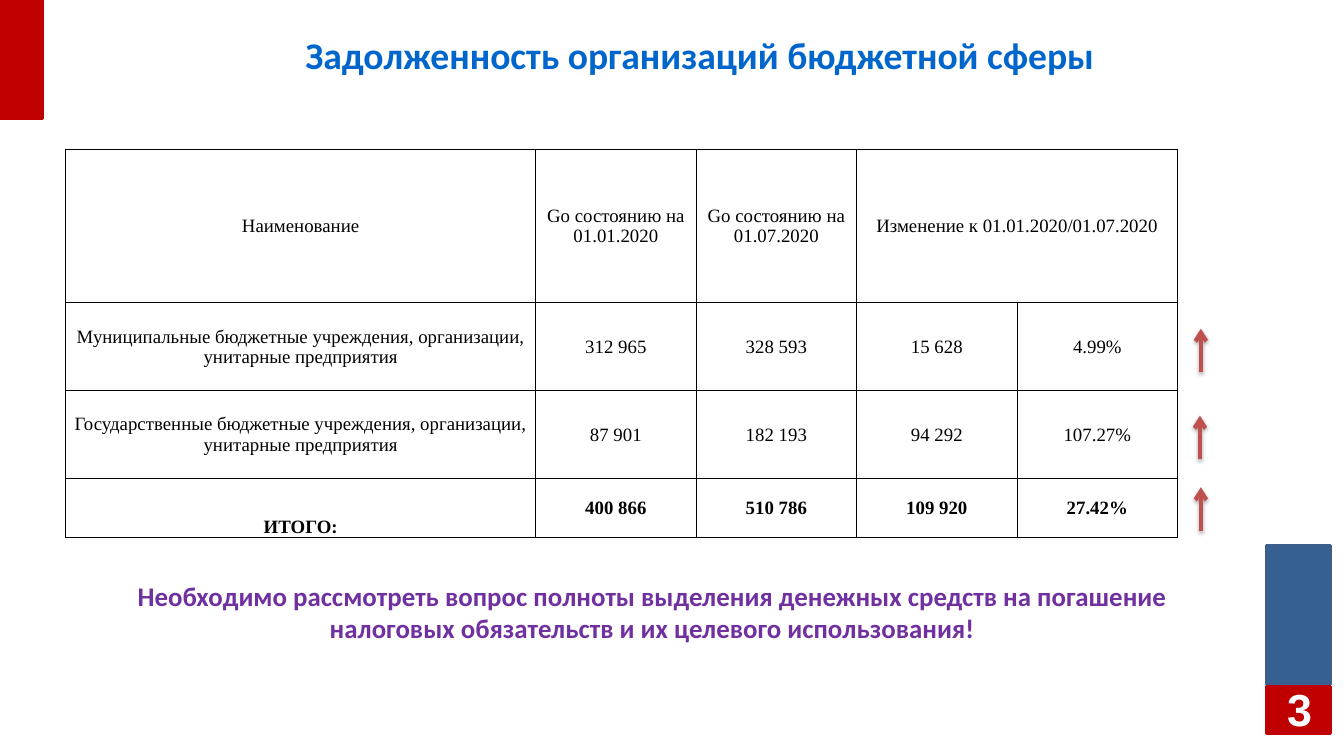
"""Builds the slide on the debts of budget-funded organisations."""
from lxml.etree import SubElement
from pptx import Presentation
from pptx.dml.color import RGBColor
from pptx.enum.shapes import MSO_CONNECTOR as Connector, MSO_SHAPE as Shape
from pptx.enum.text import MSO_ANCHOR as Anchor, PP_ALIGN as Align
from pptx.oxml import parse_xml
from pptx.oxml.ns import nsdecls, qn
from pptx.util import Inches, Pt

COLORS = {"red": "C00000", "blue": "376092", "blue_edge": "3A5F8C", "title": "0066CC",
          "purple": "7030A0", "arrow": "C0504D", "black": "000000", "white": "FFFFFF"}
COLUMN_WIDTHS = [4.86] + [1.66] * 4
ROW_HEIGHTS = [1.59, 0.91, 0.91, 0.61]
DEBTS = [
    ["Наименование", "Gо состоянию на 01.01.2020", "Gо состоянию на 01.07.2020",
     "Изменение к 01.01.2020/01.07.2020", ""],
    ["Муниципальные бюджетные учреждения, организации, унитарные предприятия",
     "312 965", "328 593", "15 628", "4.99%"],
    ["Государственные бюджетные учреждения, организации, унитарные предприятия",
     "87 901", "182 193", "94 292", "107.27%"],
    ["ИТОГО:", "400 866", "510 786", "109 920", "27.42%"],
]


class SlideBuilder:
    """Holds the style and the current slide."""

    def __init__(self, deck):
        self.page = deck.slides.add_slide(deck.slide_layouts[6])

    def color(self, name):
        return RGBColor.from_string(COLORS[name])

    def style(self, para, font, size, color, bold=True):
        para.alignment = Align.CENTER
        for span in para.runs:
            span.font.name = font
            span.font.size = Pt(size)
            span.font.bold = bold
            span.font.color.rgb = self.color(color)

    def block(self, left, top, width, height, fill, edge):
        box = self.page.shapes.add_shape(Shape.RECTANGLE, *map(Inches, (left, top, width, height)))
        box.shadow.inherit = False
        box.fill.solid()
        box.fill.fore_color.rgb = self.color(fill)
        box.line.color.rgb = self.color(edge)
        box.line.width = Pt(2)

    def text(self, left, top, width, height, words, font, size, color, side=0.11, edge=0.06):
        box = self.page.shapes.add_textbox(*map(Inches, (left, top, width, height)))
        frame = box.text_frame
        frame.word_wrap = True
        frame.vertical_anchor = Anchor.MIDDLE
        frame.margin_left = frame.margin_right = Inches(side)
        frame.margin_top = frame.margin_bottom = Inches(edge)
        frame.text = words
        self.style(frame.paragraphs[0], font, size, color)

    def border(self, cell):
        for index, side in enumerate(("lnL", "lnR", "lnT", "lnB")):
            cell._tc.get_or_add_tcPr().insert(index, parse_xml(
                f'<a:{side} {nsdecls("a")} w="6350"><a:solidFill>'
                f'<a:srgbClr val="{COLORS["black"]}"/></a:solidFill></a:{side}>'))

    def table(self, left, top, rows):
        table = self.page.shapes.add_table(
            len(rows), len(COLUMN_WIDTHS), Inches(left), Inches(top),
            Inches(sum(COLUMN_WIDTHS)), Inches(sum(ROW_HEIGHTS))).table
        table.first_row = table.horz_banding = False
        for column, width in zip(table.columns, COLUMN_WIDTHS):
            column.width = Inches(width)
        for row, height in zip(table.rows, ROW_HEIGHTS):
            row.height = Inches(height)
        table.cell(0, 3).merge(table.cell(0, 4))
        last = len(rows) - 1
        for r, row in enumerate(rows):
            for c, words in enumerate(row):
                cell = table.cell(r, c)
                cell.fill.background()
                self.border(cell)
                cell.margin_left = cell.margin_right = cell.margin_top = Inches(0.01)
                cell.margin_bottom = 0
                cell.vertical_anchor = Anchor.BOTTOM if (r, c) == (last, 0) else Anchor.MIDDLE
                if words:
                    cell.text = words
                    self.style(cell.text_frame.paragraphs[0], "Times New Roman", 14, "black",
                               r == last)

    def up_arrow(self, x, bottom, length=0.45):
        arrow = self.page.shapes.add_connector(
            Connector.STRAIGHT, Inches(x), Inches(bottom), Inches(x), Inches(bottom - length))
        arrow.line.color.rgb = self.color("arrow")
        arrow.line.width = Pt(3)
        SubElement(arrow.line._get_or_add_ln(), qn("a:tailEnd"), type="arrow")
        arrow._element.spPr.append(parse_xml(
            f'<a:effectLst {nsdecls("a")}><a:outerShdw blurRad="{Pt(3.1)}" dist="{Pt(1.8)}" '
            f'dir="5400000" rotWithShape="0"><a:srgbClr val="{COLORS["black"]}">'
            '<a:alpha val="35000"/></a:srgbClr></a:outerShdw></a:effectLst>'))


def main():
    deck = Presentation()
    deck.slide_width, deck.slide_height = Inches(13.9), Inches(7.82)
    slide = SlideBuilder(deck)
    slide.block(13.1, 5.64, 0.66, 1.44, "blue", "blue_edge")
    slide.block(13.1, 7.1, 0.66, 0.49, "red", "red")
    slide.block(0, 0, 0.44, 1.23, "red", "red")
    slide.text(0.87, 0.26, 12.73, 0.6, "Задолженность организаций бюджетной сферы",
               "Calibri", 28, "title")
    slide.table(0.68, 1.54, DEBTS)
    for x, bottom in ((12.42, 3.85), (12.41, 4.75), (12.42, 5.49)):
        slide.up_arrow(x, bottom)
    slide.text(0.69, 6.03, 12.11, 0.6,
               "Необходимо рассмотреть вопрос полноты выделения денежных средств на погашение "
               "налоговых обязательств и их целевого использования!", "Calibri", 20, "purple")
    slide.text(13.08, 7.12, 0.72, 0.42, "3", "Arial", 33.4, "white", 0, 0.05)
    deck.save("out.pptx")


if __name__ == "__main__":
    main()
